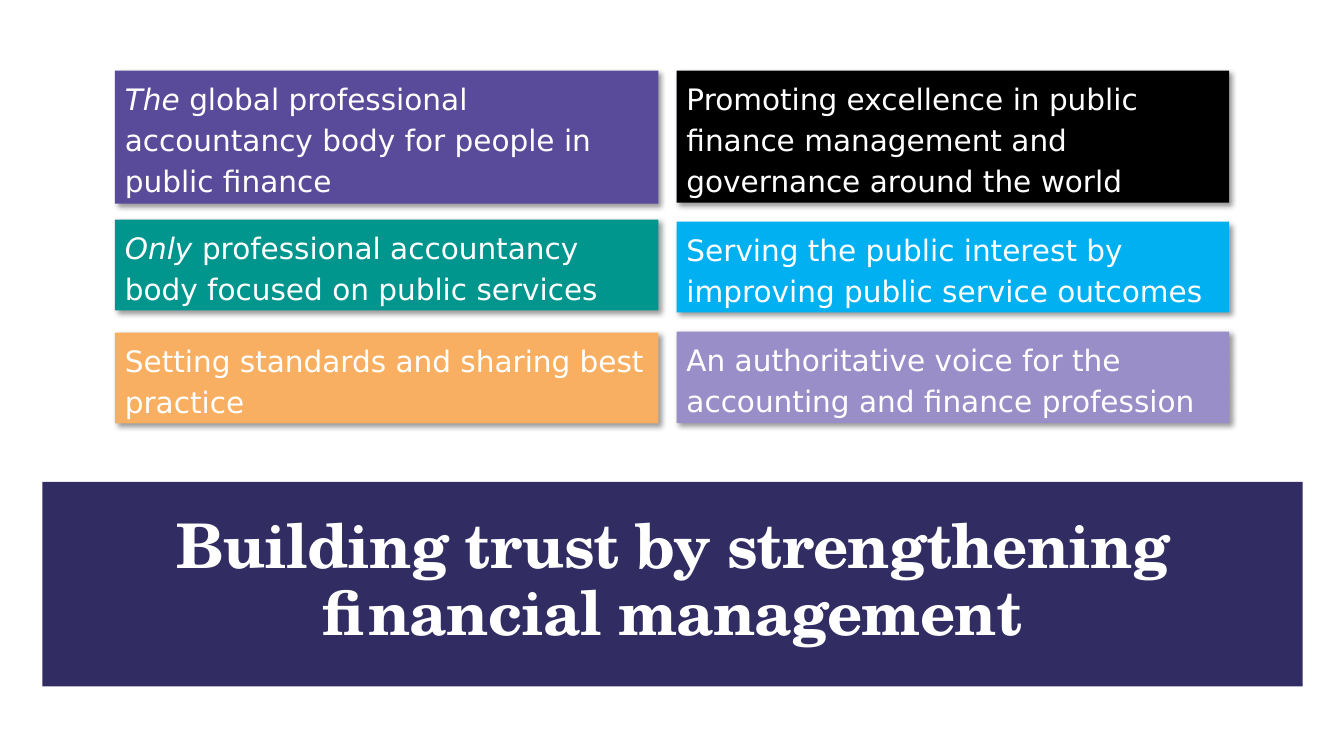
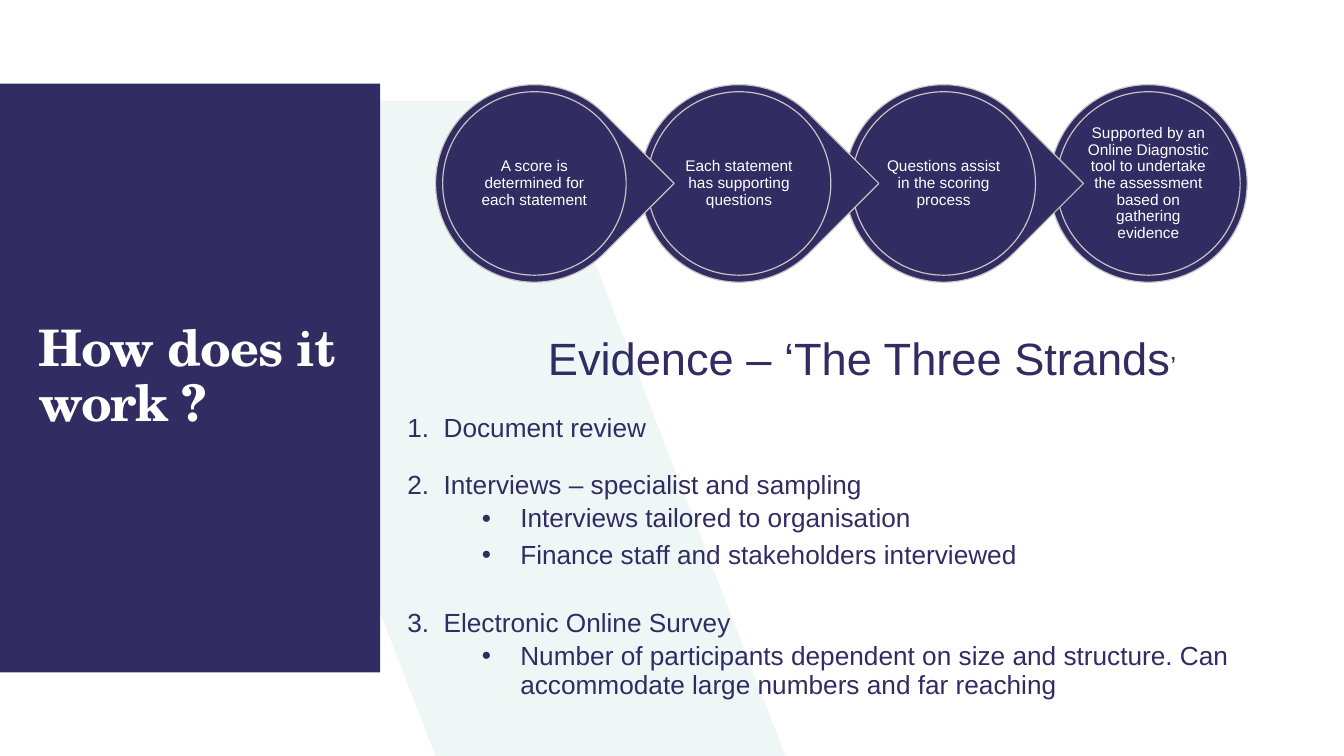
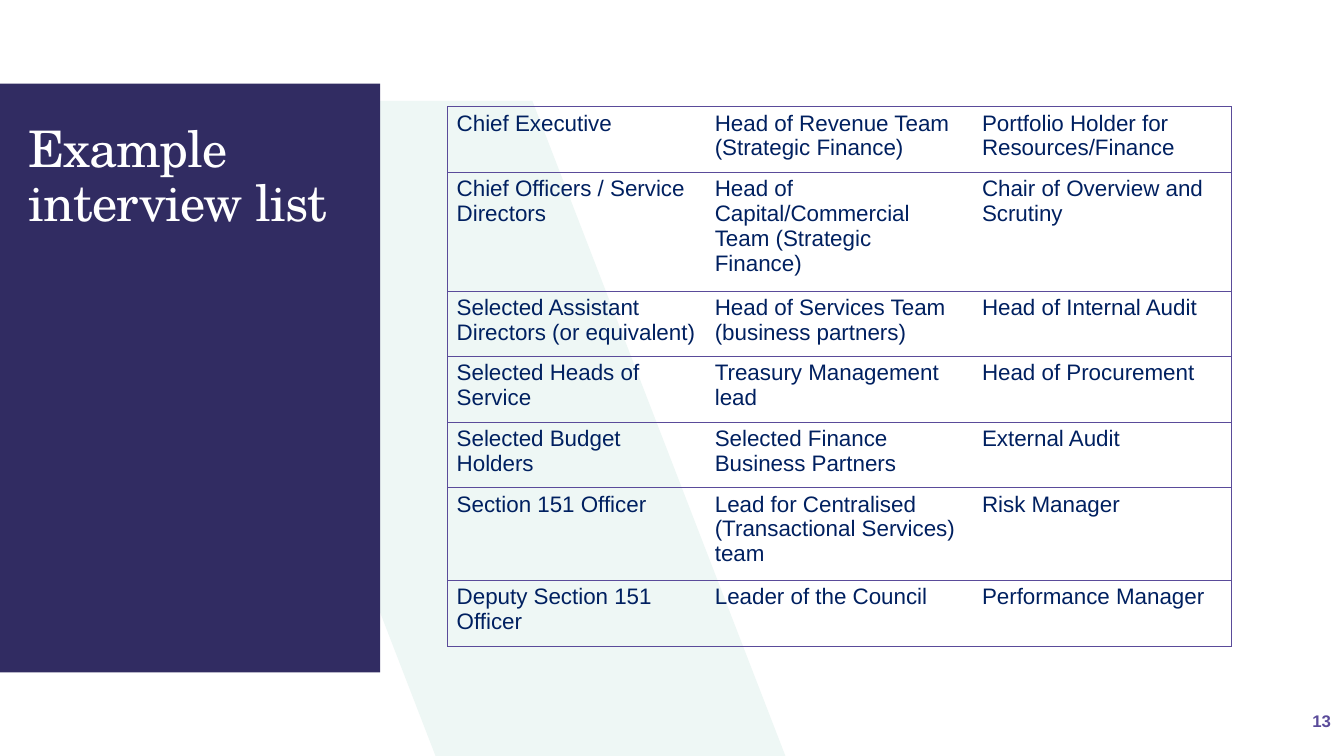
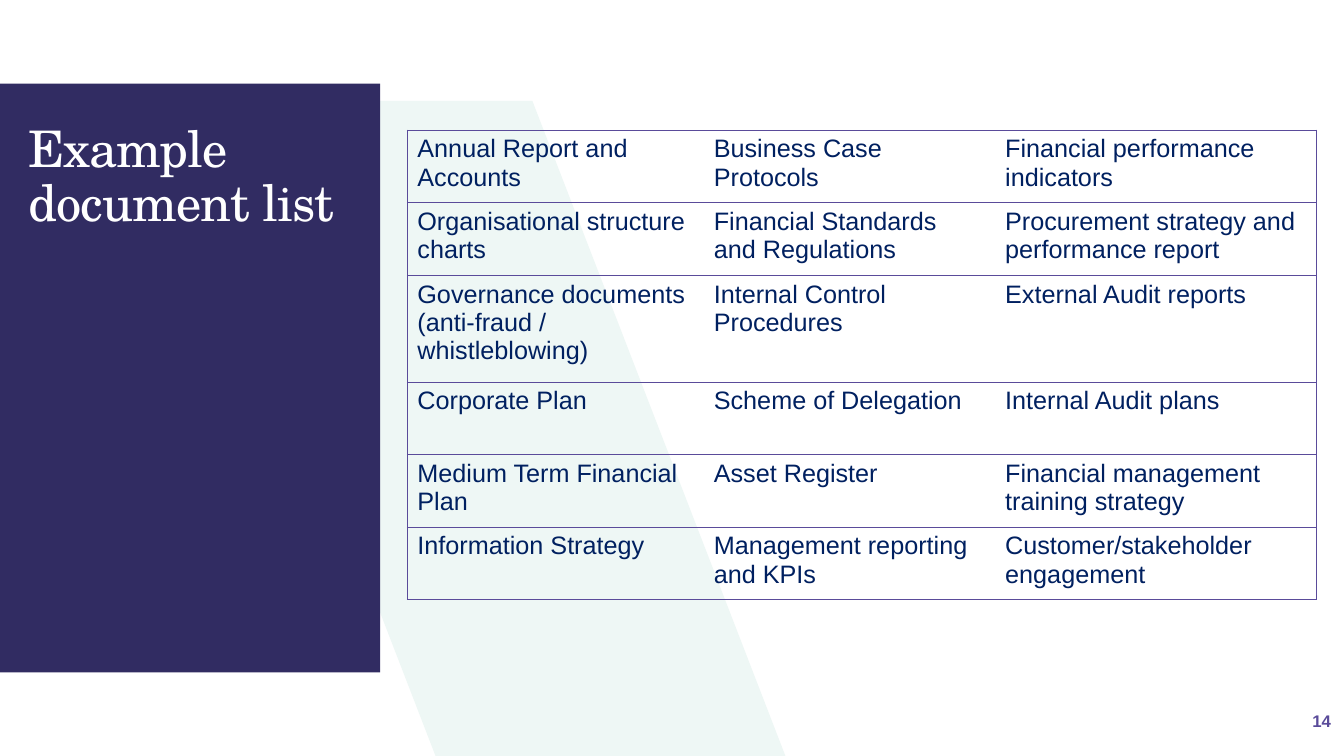
from dataclasses import dataclass

import lxml.etree
import pptx
import pptx.dml.color
import pptx.enum.shapes
import pptx.enum.text
import pptx.oxml.ns
import pptx.util

Inches = pptx.util.Inches
Pt = pptx.util.Pt
qn = pptx.oxml.ns.qn
Shape = pptx.enum.shapes.MSO_SHAPE
Align = pptx.enum.text.PP_ALIGN
Anchor = pptx.enum.text.MSO_ANCHOR
AutoSize = pptx.enum.text.MSO_AUTO_SIZE


@dataclass(frozen=True)
class Theme:
    navy: str = "312C62"
    purple: str = "5A4B9A"
    table_text: str = "002060"
    ring: str = "C7C4C3"
    pale: str = "EEF7F5"
    white: str = "FFFFFF"
    heading_face: str = "TeX Gyre Schola"
    body_face: str = "Arial"
    tile_face: str = "DejaVu Sans"
    banner_size: float = 44
    title_size: float = 36
    evidence_size: float = 32.3
    list_size: float = 18.7
    tile_size: float = 21.1
    step_size: float = 11
    number_size: float = 12


THEME = Theme()
DEFAULT_INSETS = (0.1, 0.05, 0.1, 0.05)
NO_INSETS = (0, 0, 0, 0)
NO_GRID_STYLE = "{2D5ABB26-0587-4C30-8999-92F81FD0307C}"

BANNER = "Building trust by strengthening financial management"
# Column: left, width, tiles; tile: top, height, colour, italic lead, text
TILE_COLUMNS = [
    (1.14, 5.39, [
        (0.7, 1.32, THEME.purple, "The",
         " global professional accountancy body for people in public finance"),
        (2.18, 0.9, "00958D", "Only ",
         "professional accountancy body focused on public services"),
        (3.3, 0.9, "F8AF61", "", "Setting standards and sharing best practice"),
    ]),
    (6.71, 5.48, [
        (0.7, 1.31, "000000", "",
         "Promoting excellence in public finance management and governance around the world"),
        (2.2, 0.9, "00B0F0", "",
         "Serving the public interest by improving public service outcomes"),
        (3.29, 0.91, "998EC8", "",
         "An authoritative voice for the accounting and finance profession"),
    ]),
]

STEPS = [
    "A score is determined for each statement",
    "Each statement has supporting questions",
    "Questions assist in the scoring process",
    "Supported by an Online Diagnostic tool to undertake the assessment "
    "based on gathering evidence",
]
# Strand: space before in points, heading, details
STRANDS = [
    (20, "Document review", []),
    (20, "Interviews – specialist and sampling",
     ["Interviews tailored to organisation",
      "Finance staff and stakeholders interviewed"]),
    (25, "Electronic Online Survey",
     ["Number of participants dependent on size and structure. "
      "Can accommodate large numbers and far reaching"]),
]

LISTS = [
    dict(title="Example interview list", number="13", left=4.44, top=1.06, size=16,
         insets=(0.09, 0.04, 0.09, 0.04), widths=[2.56, 2.65, 2.56],
         heights=[0.65, 1.18, 0.65, 0.65, 0.65, 0.92, 0.65],
         rows=[
             ("Chief Executive", "Head of Revenue Team (Strategic Finance)",
              "Portfolio Holder for Resources/Finance"),
             ("Chief Officers / Service Directors",
              "Head of Capital/Commercial Team (Strategic Finance)",
              "Chair of Overview and Scrutiny"),
             ("Selected Assistant Directors (or equivalent)",
              "Head of Services Team (business partners)", "Head of Internal Audit"),
             ("Selected Heads of Service", "Treasury Management lead",
              "Head of Procurement"),
             ("Selected Budget Holders", "Selected Finance Business Partners",
              "External Audit"),
             ("Section 151 Officer",
              "Lead for Centralised (Transactional Services) team", "Risk Manager"),
             ("Deputy Section 151 Officer", "Leader of the Council",
              "Performance Manager"),
         ]),
    dict(title="Example document list", number="14", left=4.04, top=1.29, size=18,
         insets=DEFAULT_INSETS, widths=[2.94, 2.89, 3.19],
         heights=[0.72, 0.72, 1.06, 0.72, 0.72, 0.72],
         rows=[
             ("Annual Report and Accounts", "Business Case Protocols",
              "Financial performance indicators"),
             ("Organisational structure charts", "Financial Standards and Regulations",
              "Procurement strategy and performance report"),
             ("Governance documents (anti-fraud / whistleblowing)",
              "Internal Control Procedures", "External Audit reports"),
             ("Corporate Plan", "Scheme of Delegation", "Internal Audit plans"),
             ("Medium Term Financial Plan", "Asset Register",
              "Financial management training strategy"),
             ("Information Strategy", "Management reporting and KPIs",
              "Customer/stakeholder engagement"),
         ]),
]


def rgb(colour):
    return pptx.dml.color.RGBColor.from_string(colour)


def apply(target, values):
    for name, value in values.items():
        setattr(target, name, value)


def add_xml(parent, tag, **attributes):
    return lxml.etree.SubElement(parent, qn(tag), attributes)


def set_frame(frame, insets=DEFAULT_INSETS, anchor=Anchor.TOP, fit=AutoSize.NONE):
    sides = ("margin_left", "margin_top", "margin_right", "margin_bottom")
    apply(frame, {side: Inches(inset) for side, inset in zip(sides, insets)})
    apply(frame, dict(word_wrap=True, vertical_anchor=anchor, auto_size=fit))


def add_span(para, text, size, colour, face=THEME.body_face, **font):
    span = para.add_run()
    span.text = text
    apply(span.font, dict(size=Pt(size), name=face, **font))
    span.font.color.rgb = rgb(colour)


def add_solid(page, kind, box, fill, line=None):
    shape = page.shapes.add_shape(kind, *map(Inches, box))
    shape.shadow.inherit = False
    shape.fill.solid()
    shape.fill.fore_color.rgb = rgb(fill)
    if line:
        shape.line.color.rgb = rgb(line)
        shape.line.width = Pt(0.85)
    else:
        shape.line.fill.background()
    return shape


def add_text_box(page, box, **frame_format):
    frame = page.shapes.add_textbox(*map(Inches, box)).text_frame
    set_frame(frame, **frame_format)
    return frame


def set_title(page, text, box, size=THEME.title_size, bold=False, align=Align.LEFT,
              **frame_format):
    """Fill the title placeholder and bring it in front of its panel."""
    title = page.shapes.title
    apply(title, dict(zip(("left", "top", "width", "height"), map(Inches, box))))
    set_frame(title.text_frame, **frame_format)
    para = title.text_frame.paragraphs[0]
    apply(para, dict(alignment=align, line_spacing=0.9))
    add_span(para, text, size, THEME.white, THEME.heading_face, bold=bold)
    for properties in title.element.iter(qn("a:rPr")):
        properties.set("spc", "-60")
    page.shapes.element.append(title.element)


def add_page(deck):
    return deck.slides.add_slide(deck.slide_layouts[5])


def add_panel_page(deck, title, **title_format):
    """Add a page with the slanted band and the title panel at the left."""
    page = add_page(deck)
    corners = [(Inches(x), Inches(y))
               for x, y in ((5.28, 1), (1.81, 1), (4.32, 7.5), (7.79, 7.5))]
    builder = page.shapes.build_freeform(*corners[0])
    builder.add_line_segments(corners[1:], close=True)
    band = builder.convert_to_shape()
    band.shadow.inherit = False
    band.fill.solid()
    band.fill.fore_color.rgb = rgb(THEME.pale)
    band.line.fill.background()
    add_solid(page, Shape.RECTANGLE, (0, 0.83, 3.77, 5.84), THEME.navy)
    set_title(page, title, (0.28, 1.23, 3.22, 5.03), **title_format)
    return page


def add_tile_shadow(tile):
    effects = tile.element.spPr.find(qn("a:effectLst"))
    shadow = add_xml(effects, "a:outerShdw", blurRad=str(Pt(4)), dist=str(Pt(3)),
                     dir=str(45 * 60000), algn="tl", rotWithShape="0")
    colour = add_xml(shadow, "a:srgbClr", val="000000")
    add_xml(colour, "a:alpha", val="40000")


def build_trust_page(deck):
    page = add_page(deck)
    add_solid(page, Shape.RECTANGLE, (0.42, 4.78, 12.5, 2.03), THEME.navy)
    set_title(page, BANNER, (0.61, 5.03, 12.12, 1.49), THEME.banner_size, True,
              Align.CENTER, anchor=Anchor.MIDDLE)
    for left, width, tiles in TILE_COLUMNS:
        for top, height, colour, lead, text in tiles:
            tile = add_solid(page, Shape.RECTANGLE, (left, top, width, height), colour)
            add_tile_shadow(tile)
            set_frame(tile.text_frame, fit=AutoSize.SHAPE_TO_FIT_TEXT)
            para = tile.text_frame.paragraphs[0]
            apply(para, dict(alignment=Align.LEFT, line_spacing=Pt(29.2)))
            for words, italic in ((lead, True), (text, False)):
                if words:
                    add_span(para, words, THEME.tile_size, THEME.white,
                             THEME.tile_face, italic=italic)


def add_step_chain(page):
    """Draw the steps from right to left, so each point lies over the next disc."""
    left, top, disc, pitch, rim = 4.32, 0.84, 1.96, 2.03, 0.07
    for index, text in reversed(list(enumerate(STEPS))):
        x = left + index * pitch
        last = index == len(STEPS) - 1
        outer = add_solid(page, Shape.OVAL if last else Shape.TEAR,
                          (x, top, disc, disc), THEME.navy, THEME.ring)
        outer.rotation = 0 if last else 45
        inner = disc - 2 * rim
        ring = add_solid(page, Shape.OVAL, (x + rim, top + rim, inner, inner),
                         THEME.navy, THEME.ring)
        set_frame(ring.text_frame, insets=(0.01,) * 4, anchor=Anchor.MIDDLE)
        para = ring.text_frame.paragraphs[0]
        apply(para, dict(alignment=Align.CENTER, line_spacing=0.9))
        add_span(para, text, THEME.step_size, THEME.white)


def add_list_item(frame, text, level, margin, hanging, marker, before, after=0):
    para = frame.add_paragraph()
    properties = para._p.get_or_add_pPr()
    properties.set("marL", str(Inches(margin)))
    properties.set("indent", str(-Inches(hanging)))
    add_xml(properties, "a:buFont", typeface=THEME.body_face)
    add_xml(properties, marker[0], **marker[1])
    apply(para, dict(level=level, line_spacing=0.94, space_before=Pt(before),
                     space_after=Pt(after)))
    add_span(para, text, THEME.list_size, THEME.navy)


def build_method_page(deck):
    page = add_panel_page(deck, "How does it work ?", bold=True, anchor=Anchor.MIDDLE)
    add_step_chain(page)
    frame = add_text_box(page, (4.04, 3.32, 9.02, 3.92), insets=NO_INSETS)
    heading = frame.paragraphs[0]
    apply(heading, dict(alignment=Align.CENTER, line_spacing=0.94))
    add_span(heading, "Evidence – ‘The Three Strands", THEME.evidence_size, THEME.navy)
    add_span(heading, "’", THEME.list_size, THEME.navy)
    number = ("a:buAutoNum", dict(type="arabicPeriod"))
    bullet = ("a:buChar", dict(char="•"))
    for before, strand, details in STRANDS:
        add_list_item(frame, strand, 0, 0.36, 0.36, number, before)
        for detail in details:
            add_list_item(frame, detail, 1, 1.12, 0.38, bullet, 2.5, 2.5)


def set_cell_borders(cell, sides):
    properties = cell._tc.get_or_add_tcPr()
    for side in sides:
        line = add_xml(properties, "a:ln" + side, w=str(Pt(0.75)))
        add_xml(add_xml(line, "a:solidFill"), "a:srgbClr", val=THEME.purple)


def add_list_table(page, left, top, size, insets, widths, heights, rows):
    box = (left, top, sum(widths), sum(heights))
    holder = page.shapes.add_table(len(rows), len(widths), *map(Inches, box))
    table = holder.table
    apply(table, dict(first_row=False, horz_banding=False))
    next(holder.element.iter(qn("a:tableStyleId"))).text = NO_GRID_STYLE
    for column, width in zip(table.columns, widths):
        column.width = Inches(width)
    for row, height, texts in zip(table.rows, heights, rows):
        row.height = Inches(height)
        for index, (cell, text) in enumerate(zip(row.cells, texts)):
            outer = {0: ["L"], len(widths) - 1: ["R"]}.get(index, [])
            set_cell_borders(cell, outer + ["T", "B"])
            cell.fill.background()
            sides = ("margin_left", "margin_top", "margin_right", "margin_bottom")
            apply(cell, {side: Inches(inset) for side, inset in zip(sides, insets)})
            add_span(cell.text_frame.paragraphs[0], text, size, THEME.table_text)


def build_list_page(deck, title, number, **table_format):
    page = add_panel_page(deck, title, insets=NO_INSETS)
    frame = add_text_box(page, (11.63, 6.95, 1.67, 0.4), anchor=Anchor.MIDDLE)
    para = frame.paragraphs[0]
    para.alignment = Align.RIGHT
    add_span(para, number, THEME.number_size, THEME.purple, bold=True)
    add_list_table(page, **table_format)


def main():
    deck = pptx.Presentation()
    apply(deck, dict(slide_width=Inches(13.33), slide_height=Inches(7.5)))
    build_trust_page(deck)
    build_method_page(deck)
    for content in LISTS:
        build_list_page(deck, **content)
    deck.save("out.pptx")


if __name__ == "__main__":
    main()
